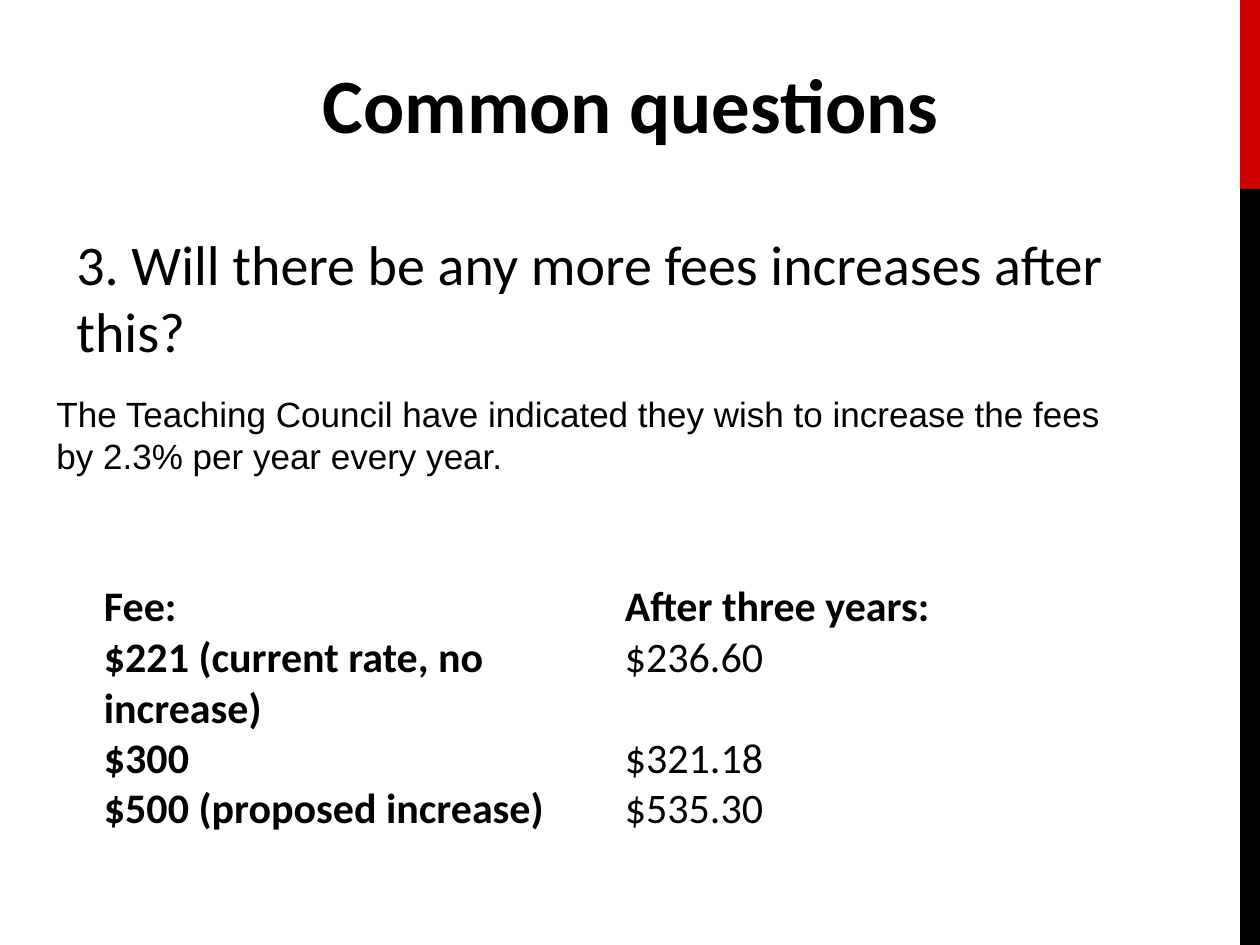
from lxml import etree
from pptx import Presentation
from pptx import util as u
from pptx.dml.color import RGBColor
from pptx.enum import shapes, text
from pptx.oxml.ns import qn

RED = RGBColor(0xCC, 0x00, 0x00)
BLACK = RGBColor(0x00, 0x00, 0x00)
WHITE = RGBColor(0xFF, 0xFF, 0xFF)
FEES = [
    ("Fee:", "After three years:"),
    ("$221 (current rate, no increase)", "$236.60"),
    ("$300", "$321.18"),
    ("$500 (proposed increase)", "$535.30"),
]


def px(n):
    """Turn slide pixels into EMU."""
    return u.Emu(round(n * 914400 / 126))


def write(tf, words, size, font="Calibri", bold=False):
    """Set one black paragraph and return it."""
    tf.text = words
    tf.word_wrap = True
    p = tf.paragraphs[0]
    f = p.runs[0].font
    f.size, f.name, f.bold = u.Pt(size), font, bold
    f.color.rgb = BLACK
    return p


def add_bar(s, top, height, color):
    """Add a block of the right edge stripe."""
    sp = s.shapes.add_shape(shapes.MSO_SHAPE.RECTANGLE, px(1240), px(top), px(20), px(height))
    sp.shadow.inherit = False
    sp.fill.solid()
    sp.fill.fore_color.rgb = color
    sp.line.fill.background()


def add_text(s, box, words, size, **style):
    """Add a wrapping text box and return its shape."""
    sp = s.shapes.add_textbox(*map(px, box))
    write(sp.text_frame, words, size, **style)
    return sp


def add_border(cell, side, width):
    """Add a white border to one side of a cell."""
    pr = cell._tc.get_or_add_tcPr()
    ln = etree.SubElement(pr, qn(f"a:ln{side}"), w=str(u.Pt(width)))
    fill = etree.SubElement(ln, qn("a:solidFill"))
    etree.SubElement(fill, qn("a:srgbClr"), val=str(WHITE))


def add_fees(s):
    """Add the fee table."""
    frame = s.shapes.add_table(len(FEES), 2, px(95), px(582), px(1042), px(49 * len(FEES)))
    table = frame.table
    table.horz_banding = False
    for i, row in enumerate(FEES):
        table.rows[i].height = px(49)
        for j, words in enumerate(row):
            cell = table.cell(i, j)
            cell.margin_left = cell.margin_right = px(9)
            cell.margin_top = cell.margin_bottom = 0
            for side in "LRTB":
                heavy = (side == "B" and i == 0) or (side == "T" and i == 1)
                add_border(cell, side, 3 if heavy else 1)
            cell.fill.background()
            write(cell.text_frame, words, 24, bold=i == 0 or j == 0)


def main():
    """Build and save the slide."""
    prs = Presentation()
    prs.slide_width, prs.slide_height = px(1260), px(945)
    s = prs.slides.add_slide(prs.slide_layouts[6])
    add_bar(s, 0, 189, RED)
    add_bar(s, 189, 756, BLACK)
    add_text(s, (64, 223, 1134, 622), "3. Will there be any more fees increases after this?", 32)
    title = add_text(s, (64, 57, 1134, 157), "Common questions", 43.9, bold=True)
    title.text_frame.margin_top = 0
    title.text_frame.paragraphs[0].alignment = text.PP_ALIGN.CENTER
    add_fees(s)
    answer = add_text(
        s, (44, 386, 1091, 97),
        "The Teaching Council have indicated they wish to increase the fees by 2.3% per year every year.",
        20, font="Arial")
    answer.text_frame.vertical_anchor = text.MSO_ANCHOR.MIDDLE
    prs.save("out.pptx")


if __name__ == "__main__":
    main()
